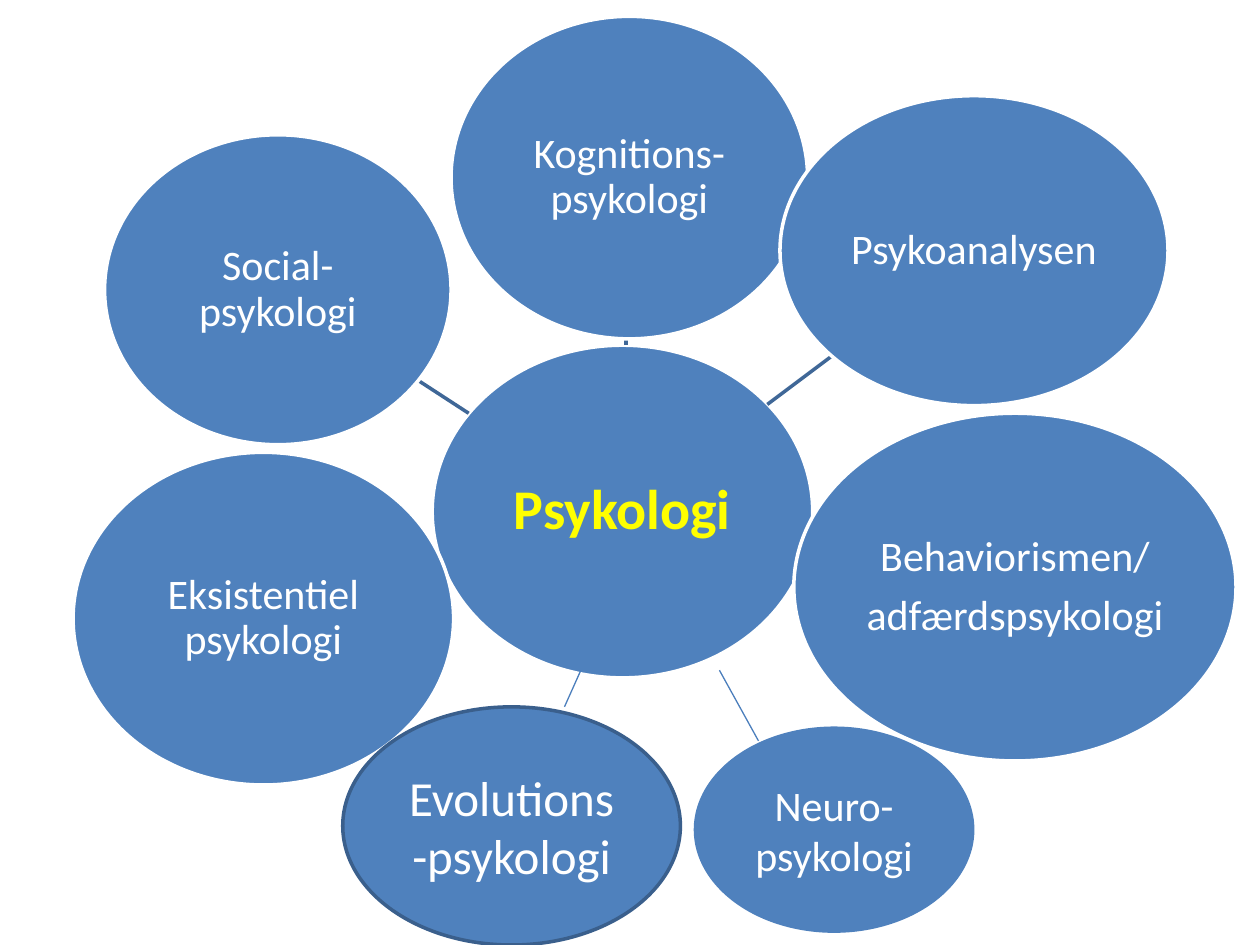
from pptx import Presentation
from pptx.dml.color import RGBColor
from pptx.enum.shapes import MSO_CONNECTOR as Link, MSO_SHAPE as Shape
from pptx.enum.text import MSO_ANCHOR as Anchor, PP_ALIGN as Align
from pptx.util import Inches, Pt
from lxml.etree import SubElement
from pptx.oxml.ns import qn

deck = Presentation()
deck.slide_width, deck.slide_height = Inches(10), Inches(7.5)
page = deck.slides.add_slide(deck.slide_layouts[6])
COL = deck.slide_width / 100
ROW = deck.slide_height / 75
BLUE, WHITE, YELLOW = "4F81BD", "FFFFFF", "FFFF00"
SPOKE, EDGE, THIN = "3F6797", "3A5F8C", "4B7EBC"


def paint(target, color):
    if hasattr(target, "solid"):
        target.solid()
        target.fore_color.rgb = RGBColor.from_string(color)
    else:
        target.rgb = RGBColor.from_string(color)


def draw_line(ends, color, width):
    x1, y1, x2, y2 = ends
    line = page.shapes.add_connector(
        Link.STRAIGHT, int(x1 * COL), int(y1 * ROW), int(x2 * COL), int(y2 * ROW))
    paint(line.line.fill, color)
    line.line.width = Pt(width)
    SubElement(line._element.spPr, qn("a:effectLst"))


petals = [
    (["Psykologi"], (34.3, 27.4, 30.2, 26.4), None),
    (["Kognitions-psykologi"], (35.8, 1.3, 28.3, 25.6), (49.7, 27.4, 49.7, 26.9)),
    (["Psykoanalysen"], (61.9, 7.6, 30.8, 24.6), (60.9, 32.1, 66.1, 28.2)),
    (["Behaviorismen/", "adfærdspsykologi"], (63, 32.8, 35.1, 27.6), None),
    (["Eksistentiel psykologi"], (5.8, 35.9, 30.2, 26.4), None),
    (["Social-psykologi"], (8.3, 10.7, 27.5, 24.6), (37.2, 32.8, 33.2, 30.2)),
    (["Evolutions-psykologi"], (27.2, 56.1, 26.8, 18.9), None),
    (["Neuro-psykologi"], (55.2, 57.8, 22, 16.1), None),
]
outlines = {"Evolutions-psykologi": EDGE, "Neuro-psykologi": BLUE}
sizes = {"Psykologi": 32, "Evolutions-psykologi": 28}

for lines, (left, top, width, height), spoke in petals:
    name = lines[0]
    center = name == "Psykologi"
    added = name in outlines
    if spoke:
        draw_line(spoke, SPOKE, 2)
    petal = page.shapes.add_shape(
        Shape.OVAL, int(left * COL), int(top * ROW), int(width * COL), int(height * ROW))
    petal.shadow.inherit = False
    paint(petal.fill, BLUE)
    paint(petal.line.fill, outlines.get(name, WHITE))
    petal.line.width = Pt(2)
    box = petal.text_frame
    box.word_wrap = True
    box.vertical_anchor = Anchor.MIDDLE
    if not added:
        box.margin_left = box.margin_right = Inches(0.02)
        box.margin_top = box.margin_bottom = Inches(0.02)
    for index, text in enumerate(lines):
        para = box.add_paragraph() if index else box.paragraphs[0]
        para.alignment = Align.CENTER
        if not added:
            para.line_spacing = 0.9
            para.space_after = Pt(8)
        span = para.add_run()
        span.text = text
        span.font.name = "Calibri"
        span.font.size = Pt(sizes.get(name, 24))
        span.font.bold = center
        paint(span.font.color, YELLOW if center else WHITE)

for ends in [(46.1, 53.2, 44.8, 56.1), (57.1, 53.2, 60.2, 58.8)]:
    draw_line(ends, THIN, 0.75)

deck.save("out.pptx")
